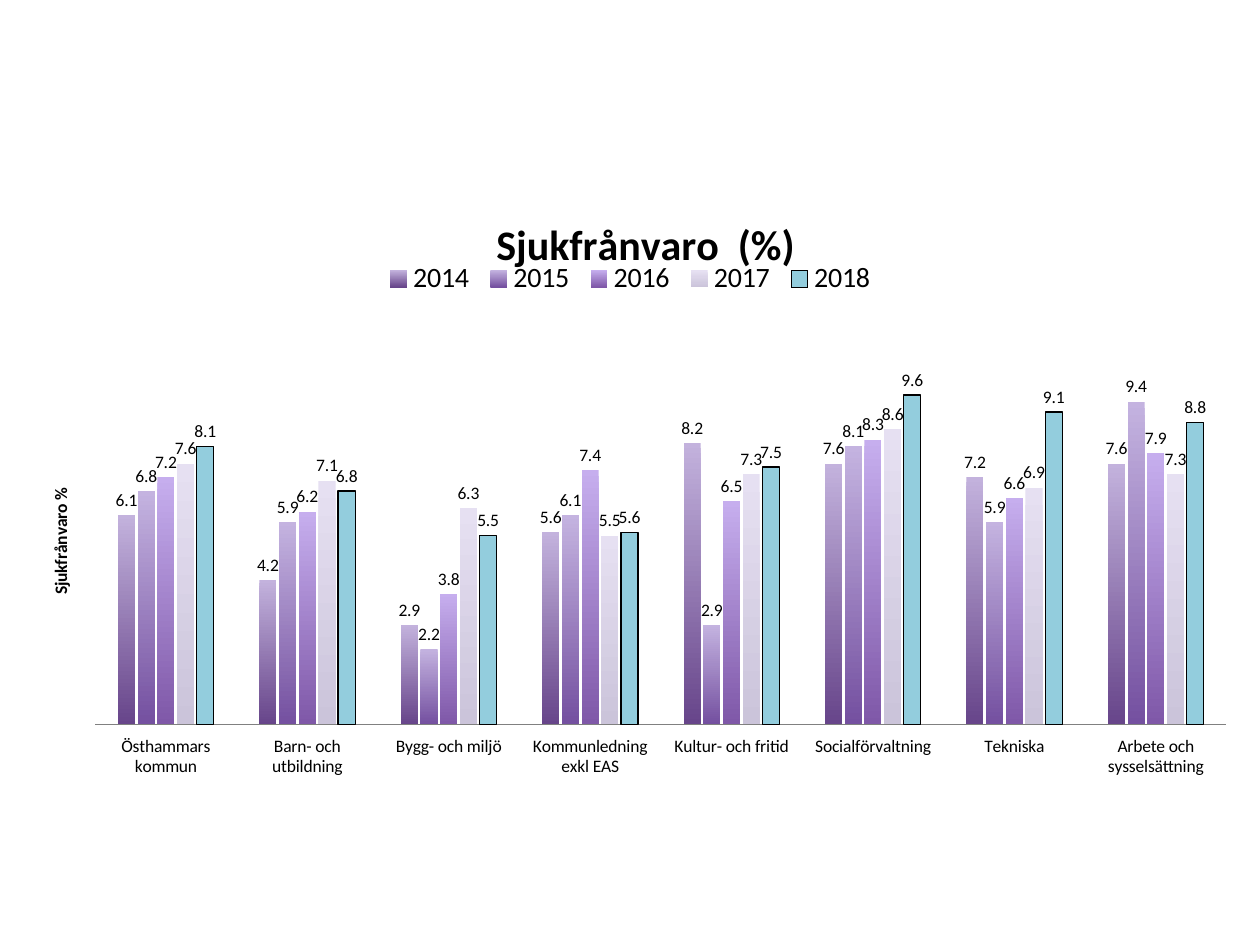
from lxml import etree
from pptx import Presentation
from pptx.chart.data import CategoryChartData
from pptx.dml.color import RGBColor
from pptx.enum.chart import (XL_CHART_TYPE, XL_LABEL_POSITION,
                             XL_LEGEND_POSITION, XL_TICK_LABEL_POSITION,
                             XL_TICK_MARK)
from pptx.oxml.ns import qn
from pptx.util import Pt

CLUSTERED = XL_CHART_TYPE.COLUMN_CLUSTERED
OUTSIDE_END = XL_LABEL_POSITION.OUTSIDE_END
LEGEND_TOP = XL_LEGEND_POSITION.TOP
LABELS_LOW = XL_TICK_LABEL_POSITION.LOW
NO_TICKS = XL_TICK_MARK.NONE

BLANK_LAYOUT = 6
DEPARTMENTS = ["Östhammars kommun", "Barn- och utbildning", "Bygg- och miljö",
               "Kommunledning exkl EAS", "Kultur- och fritid",
               "Socialförvaltning", "Tekniska", "Arbete och sysselsättning"]
ABSENCE = {
    "2014": [6.1, 4.2, 2.9, 5.6, 8.2, 7.6, 7.2, 7.6],
    "2015": [6.8, 5.9, 2.2, 6.1, 2.9, 8.1, 5.9, 9.4],
    "2016": [7.2, 6.2, 3.8, 7.4, 6.5, 8.3, 6.6, 7.9],
    "2017": [7.6, 7.1, 6.3, 5.5, 7.3, 8.6, 6.9, 7.3],
    "2018": [8.1, 6.8, 5.5, 5.6, 7.5, 9.6, 9.1, 8.8],
}
# Top and bottom colour of each year's columns; one colour is a solid fill.
YEAR_COLORS = {
    "2014": ["C3B2DD", "67458A"],
    "2015": ["C4B3E0", "7450A0"],
    "2016": ["C6AEEE", "7F58A8"],
    "2017": ["E6E0F2", "CBC4DA"],
    "2018": ["93CDDD"],
}


def rgb(hex_color):
    return RGBColor.from_string(hex_color)


def style_font(font, size=10, bold=False, color="000000", name="Calibri"):
    font.size, font.bold, font.name = Pt(size), bold, name
    font.color.rgb = rgb(color)


def write(frame, text, **font_format):
    run = frame.paragraphs[0].add_run()
    run.text = text
    style_font(run.font, **font_format)


def place(element, index, inner=False, **fractions):
    """Place a chart part by fractions of the chart's width and height."""
    for old in element.findall(qn("c:layout")):
        element.remove(old)
    layout = etree.Element(qn("c:layout"))
    manual = etree.SubElement(layout, qn("c:manualLayout"))
    settings = {"layoutTarget": "inner"} if inner else {}
    settings.update(xMode="edge", yMode="edge", **fractions)
    for tag, value in settings.items():
        etree.SubElement(manual, qn(f"c:{tag}")).set("val", str(value))
    element.insert(index, layout)


class Deck:
    def __init__(self, width, height):
        self.presentation = Presentation()
        self.presentation.slide_width = Pt(width)
        self.presentation.slide_height = Pt(height)
        self.line_color = "808080"
        self.slide = None

    def add_slide(self):
        layout = self.presentation.slide_layouts[BLANK_LAYOUT]
        self.slide = self.presentation.slides.add_slide(layout)

    def add_columns(self, left, top, width, height, categories, values):
        data = CategoryChartData(number_format="0.0")
        data.categories = categories
        for year, shares in values.items():
            data.add_series(year, shares)
        chart = self.slide.shapes.add_chart(
            CLUSTERED, Pt(left), Pt(top), Pt(width), Pt(height), data).chart
        style_font(chart.font)
        plot = chart.plots[0]
        plot.gap_width, plot.overlap = 266, -15
        plot.vary_by_categories = False
        for series in plot.series:
            self.style_series(series, YEAR_COLORS[series.name])
        self.style_axes(chart)
        plot_area = chart._chartSpace.chart.plotArea
        place(plot_area, 0, inner=True, x=0.06, y=0.24, w=0.92, h=0.67)
        return chart

    def style_series(self, series, colors):
        fill = series.format.fill
        if len(colors) == 1:
            fill.solid()
            fill.fore_color.rgb = rgb(colors[0])
            series.format.line.color.rgb = rgb("000000")
            series.format.line.width = Pt(0.75)
        else:
            fill.gradient()
            fill.gradient_angle = 270
            for stop, color in zip(fill.gradient_stops, colors):
                stop.color.rgb = rgb(color)
            series.format.line.fill.background()
        series.invert_if_negative = False
        labels = series.data_labels
        labels.show_value = True
        labels.position = OUTSIDE_END
        labels.number_format = "#,##0.0"
        labels.number_format_is_linked = False
        style_font(labels.font)

    def style_axes(self, chart):
        departments, share = chart.category_axis, chart.value_axis
        departments.major_tick_mark = NO_TICKS
        departments.tick_label_position = LABELS_LOW
        departments.format.line.color.rgb = rgb(self.line_color)
        style_font(departments.tick_labels.font)
        share.minimum_scale, share.maximum_scale = 0, 12
        share.has_major_gridlines = False
        share.visible = False

    def add_chart_title(self, chart, text, x, y):
        write(chart.chart_title.text_frame, text, size=24, bold=True)
        chart.chart_title.include_in_layout = False
        place(chart.chart_title._element, 1, x=x, y=y)

    def add_axis_title(self, axis, text, x, y):
        title = axis.axis_title
        write(title.text_frame, text, bold=True)
        body = title._element.find(".//" + qn("a:bodyPr"))
        body.set("rot", "-5400000")
        body.set("vert", "horz")
        place(title._element, 1, x=x, y=y)

    def add_legend(self, chart, **fractions):
        chart.has_legend = True
        chart.legend.position = LEGEND_TOP
        chart.legend.include_in_layout = False
        style_font(chart.legend.font, size=16)
        place(chart.legend._element, 1, **fractions)


def main():
    deck = Deck(720, 540)
    deck.add_slide()
    chart = deck.add_columns(12.24, 94.32, 702.72, 351.36, DEPARTMENTS, ABSENCE)
    deck.add_chart_title(chart, "Sjukfrånvaro  (%)", x=0.38, y=0.07)
    deck.add_axis_title(chart.value_axis, "Sjukfrånvaro %", x=0.02, y=0.52)
    deck.add_legend(chart, x=0.29, y=0.15, w=0.41, h=0.07)
    deck.presentation.save("out.pptx")


if __name__ == "__main__":
    main()
